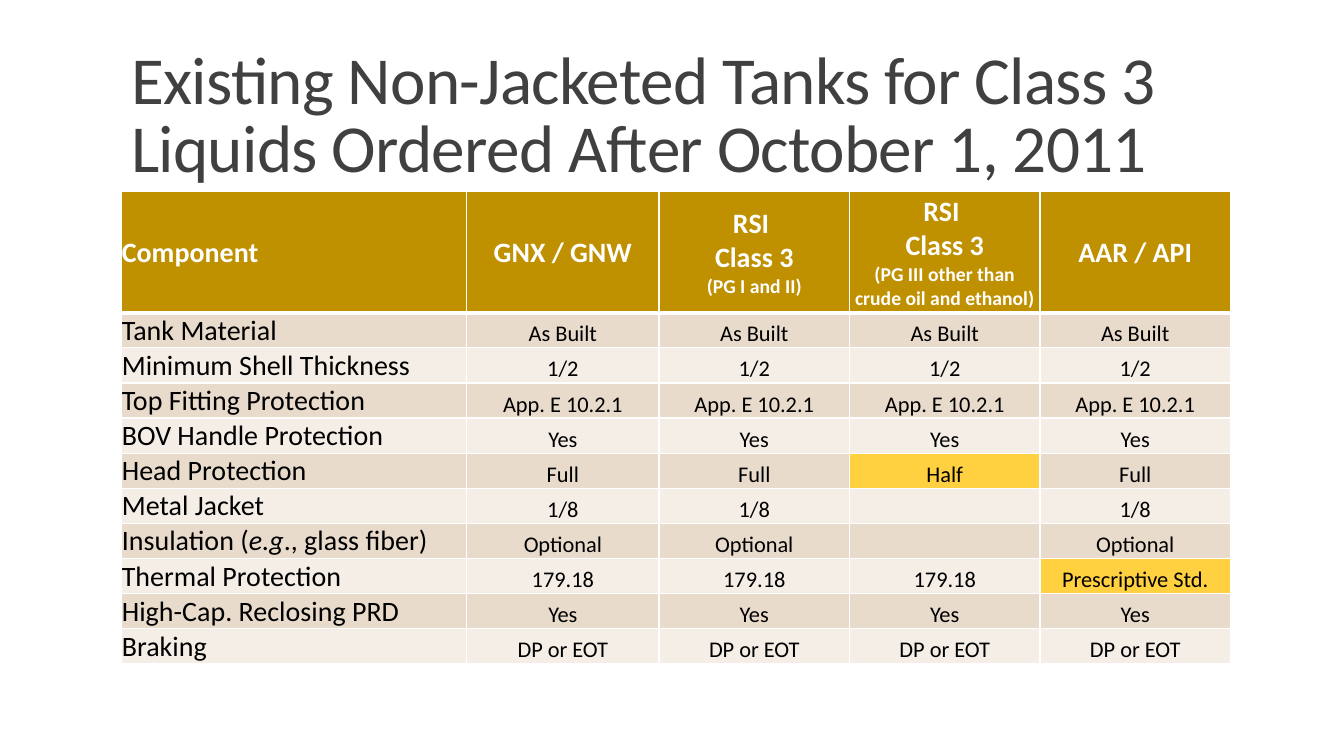
from lxml.etree import SubElement
from pptx import Presentation
from pptx.dml.color import RGBColor
from pptx.enum.text import MSO_ANCHOR, MSO_AUTO_SIZE, PP_ALIGN
from pptx.oxml.ns import qn
from pptx.util import Cm, Pt

FONT = "Calibri"
COLORS = {
    "title": "404040",
    "header": "BF9000",
    "header_text": "FFFFFF",
    "text": "000000",
    "border": "FFFFFF",
    "band_dark": "E8DBCC",
    "band_light": "F4EEE7",
    "highlight": "FFD040",
}
COLUMN_WIDTHS = [8.71, 4.85, 4.8, 4.8, 4.8]
HEADER_HEIGHT, ROW_HEIGHT = 3.05, 0.76

# Each header is a list of lines: (text, size)
HEADERS = [
    [("Component", 20)],
    [("GNX / GNW", 20)],
    [("RSI ", 20), ("Class 3", 20), ("(PG I and II)", 14)],
    [("RSI ", 20), ("Class 3", 20), ("(PG III other than crude oil and ethanol)", 14)],
    [("AAR / API", 20)],
]
# Component name, then one value for each proposal
COMPONENTS = [
    ("Tank Material", ["As Built"] * 4),
    ("Minimum Shell Thickness", ["1/2"] * 4),
    ("Top Fitting Protection", ["App. E 10.2.1"] * 4),
    ("BOV Handle Protection", ["Yes"] * 4),
    ("Head Protection", ["Full", "Full", "Half", "Full"]),
    ("Metal Jacket", ["1/8", "1/8", "", "1/8"]),
    ("Insulation (|e.g|., glass fiber)", ["Optional", "Optional", "", "Optional"]),
    ("Thermal Protection", ["179.18"] * 3 + ["Prescriptive Std."]),
    ("High-Cap. Reclosing PRD", ["Yes"] * 4),
    ("Braking", ["DP or EOT"] * 4),
]
HIGHLIGHTED = {"Half", "Prescriptive Std."}


def add_run(paragraph, text, size, color, bold=False, italic=False):
    run = paragraph.add_run()
    run.text = text
    run.font.name = FONT
    run.font.size = Pt(size)
    run.font.bold = bold
    run.font.italic = italic
    run.font.color.rgb = RGBColor.from_string(COLORS[color])
    return run


def add_title(slide, text):
    title = slide.shapes.title
    title.left, title.top, title.width, title.height = Cm(3.05), Cm(0.79), Cm(27.94), Cm(4.04)
    frame = title.text_frame
    frame.word_wrap = True
    frame.auto_size = MSO_AUTO_SIZE.NONE
    frame.vertical_anchor = MSO_ANCHOR.BOTTOM
    paragraph = frame.paragraphs[0]
    paragraph.alignment = PP_ALIGN.LEFT
    paragraph.line_spacing = 0.85
    run = add_run(paragraph, text, 48, "title")
    run.font._element.set("spc", "-50")


def set_borders(cell, widths):
    """Draw solid borders; widths maps a side (L, R, T, B) to points."""
    properties = cell._tc.get_or_add_tcPr()
    for index, (side, width) in enumerate(widths.items()):
        line = SubElement(properties, qn(f"a:ln{side}"), w=str(Pt(width)))
        fill = SubElement(line, qn("a:solidFill"))
        SubElement(fill, qn("a:srgbClr"), val=COLORS["border"])
        properties.insert(index, line)


def format_cell(cell, fill, anchor, top=1, bottom=1):
    cell.margin_left = cell.margin_right = cell.margin_top = Cm(0.02)
    cell.margin_bottom = 0
    cell.vertical_anchor = anchor
    cell.fill.solid()
    cell.fill.fore_color.rgb = RGBColor.from_string(COLORS[fill])
    set_borders(cell, {"L": 1, "R": 1, "T": top, "B": bottom})


def fill_header(table):
    for column, lines in enumerate(HEADERS):
        cell = table.cell(0, column)
        format_cell(cell, "header", MSO_ANCHOR.MIDDLE, bottom=3)
        for index, (text, size) in enumerate(lines):
            frame = cell.text_frame
            paragraph = frame.add_paragraph() if index else frame.paragraphs[0]
            paragraph.alignment = PP_ALIGN.CENTER if column else PP_ALIGN.LEFT
            add_run(paragraph, text, size, "header_text", bold=True)


def fill_component(table, row, name, values):
    band = "band_dark" if row % 2 else "band_light"
    top = 3 if row == 1 else 1
    name_cell = table.cell(row, 0)
    format_cell(name_cell, band, MSO_ANCHOR.BOTTOM, top)
    # Every second part of a name is italic
    for index, part in enumerate(name.split("|")):
        add_run(name_cell.text_frame.paragraphs[0], part, 20, "text", italic=index % 2 == 1)
    for column, value in enumerate(values, start=1):
        cell = table.cell(row, column)
        format_cell(cell, "highlight" if value in HIGHLIGHTED else band, MSO_ANCHOR.BOTTOM, top)
        paragraph = cell.text_frame.paragraphs[0]
        paragraph.alignment = PP_ALIGN.CENTER
        paragraph.font.size = Pt(16)
        if value:
            add_run(paragraph, value, 16, "text")


def add_comparison_table(slide):
    height = HEADER_HEIGHT + ROW_HEIGHT * len(COMPONENTS)
    frame = slide.shapes.add_table(
        len(COMPONENTS) + 1, len(HEADERS),
        Cm(3.05), Cm(4.83), Cm(sum(COLUMN_WIDTHS)), Cm(height),
    )
    table = frame.table
    for column, width in zip(table.columns, COLUMN_WIDTHS):
        column.width = Cm(width)
    for index, row in enumerate(table.rows):
        row.height = Cm(ROW_HEIGHT if index else HEADER_HEIGHT)
    fill_header(table)
    for row, (name, values) in enumerate(COMPONENTS, start=1):
        fill_component(table, row, name, values)


def main():
    presentation = Presentation()
    presentation.slide_width, presentation.slide_height = Cm(33.87), Cm(19.05)
    slide = presentation.slides.add_slide(presentation.slide_layouts[5])
    add_title(slide, "Existing Non-Jacketed Tanks for Class 3 Liquids Ordered After October 1, 2011")
    add_comparison_table(slide)
    presentation.save("out.pptx")


if __name__ == "__main__":
    main()
